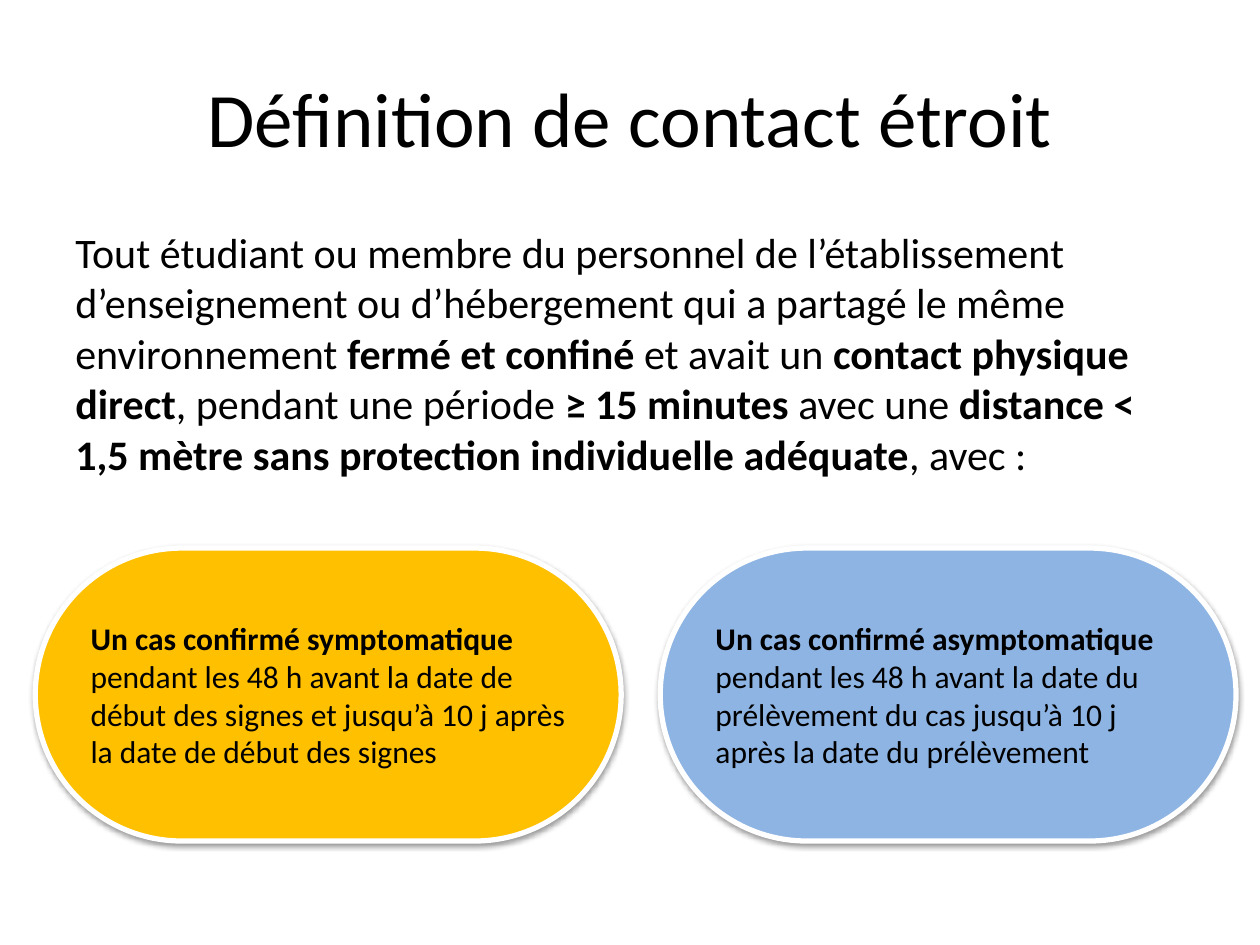
from lxml import etree
from pptx import Presentation
from pptx import util as u
from pptx.dml.color import RGBColor
from pptx.enum import shapes, text
from pptx.oxml.ns import qn

WIDTH, HEIGHT = u.Inches(10), u.Inches(7.5)
FONT = "Calibri"
BLACK, WHITE, AMBER, BLUE = "000000", "FFFFFF", "FFC000", "8EB4E3"
MARGIN = 0.05
PILL_TOP, PILL_HEIGHT = 0.58, 0.31

DEFINITION = [
    ("Tout étudiant ou membre du personnel de l’établissement d’enseignement "
     "ou d’hébergement qui a partagé le même environnement ", False),
    ("fermé et confiné ", True),
    ("et avait un ", False),
    ("contact physique direct", True),
    (", pendant une période ", False),
    ("≥ 15 minutes ", True),
    ("avec une ", False),
    ("distance < 1,5 mètre sans protection individuelle adéquate", True),
    (", avec :", False),
]

CASES = [
    (0.028, 0.465, AMBER, "Un cas confirmé symptomatique",
     " pendant les 48 h avant la date de début des signes "
     "et jusqu’à 10 j après la date de début des signes"),
    (0.524, 0.457, BLUE, "Un cas confirmé asymptomatique",
     " pendant les 48 h avant la date du prélèvement du cas "
     "jusqu’à 10 j après la date du prélèvement"),
]


def colour(hex_value):
    return RGBColor.from_string(hex_value)


def place(left, top, width, height):
    return (int(WIDTH * left), int(HEIGHT * top),
            int(WIDTH * width), int(HEIGHT * height))


def write(frame, pieces, size, align, anchor):
    frame.word_wrap = True
    frame.vertical_anchor = anchor
    paragraph = frame.paragraphs[0]
    paragraph.alignment = align
    for wording, bold in pieces:
        run = paragraph.add_run()
        run.text = wording
        run.font.name = FONT
        run.font.size = u.Pt(size)
        run.font.bold = bold
        run.font.color.rgb = colour(BLACK)


def add_text(slide, area, pieces, size, align, anchor):
    box = slide.shapes.add_textbox(*place(*area))
    write(box.text_frame, pieces, size, align, anchor)


def add_shadow(shape):
    shape.shadow.inherit = False
    effects = shape._element.spPr.find(qn("a:effectLst"))
    shadow = etree.SubElement(
        effects, qn("a:outerShdw"), blurRad=str(u.Pt(3.1)),
        dist=str(u.Pt(1.6)), dir=str(90 * 60000), rotWithShape="0")
    tint = etree.SubElement(shadow, qn("a:srgbClr"), val=BLACK)
    etree.SubElement(tint, qn("a:alpha"), val="38000")


def add_pill(slide, left, width, fill, heading, period):
    pill = slide.shapes.add_shape(
        shapes.MSO_SHAPE.ROUNDED_RECTANGLE,
        *place(left, PILL_TOP, width, PILL_HEIGHT))
    pill.adjustments[0] = 0.5
    pill.fill.solid()
    pill.fill.fore_color.rgb = colour(fill)
    pill.line.color.rgb = colour(WHITE)
    pill.line.width = u.Pt(3)
    add_shadow(pill)
    write(pill.text_frame, [(heading, True), (period, False)], 18,
          text.PP_ALIGN.LEFT, text.MSO_ANCHOR.MIDDLE)


def main():
    deck = Presentation()
    deck.slide_width, deck.slide_height = WIDTH, HEIGHT
    slide = deck.slides.add_slide(deck.slide_layouts[6])
    column = 1 - 2 * MARGIN
    add_text(slide, (MARGIN, 0.04, column, 0.167),
             [("Définition de contact étroit", False)], 44,
             text.PP_ALIGN.CENTER, text.MSO_ANCHOR.MIDDLE)
    add_text(slide, (MARGIN, 0.233, column, 0.66), DEFINITION, 24,
             text.PP_ALIGN.LEFT, text.MSO_ANCHOR.TOP)
    for case in CASES:
        add_pill(slide, *case)
    deck.save("out.pptx")


if __name__ == "__main__":
    main()
